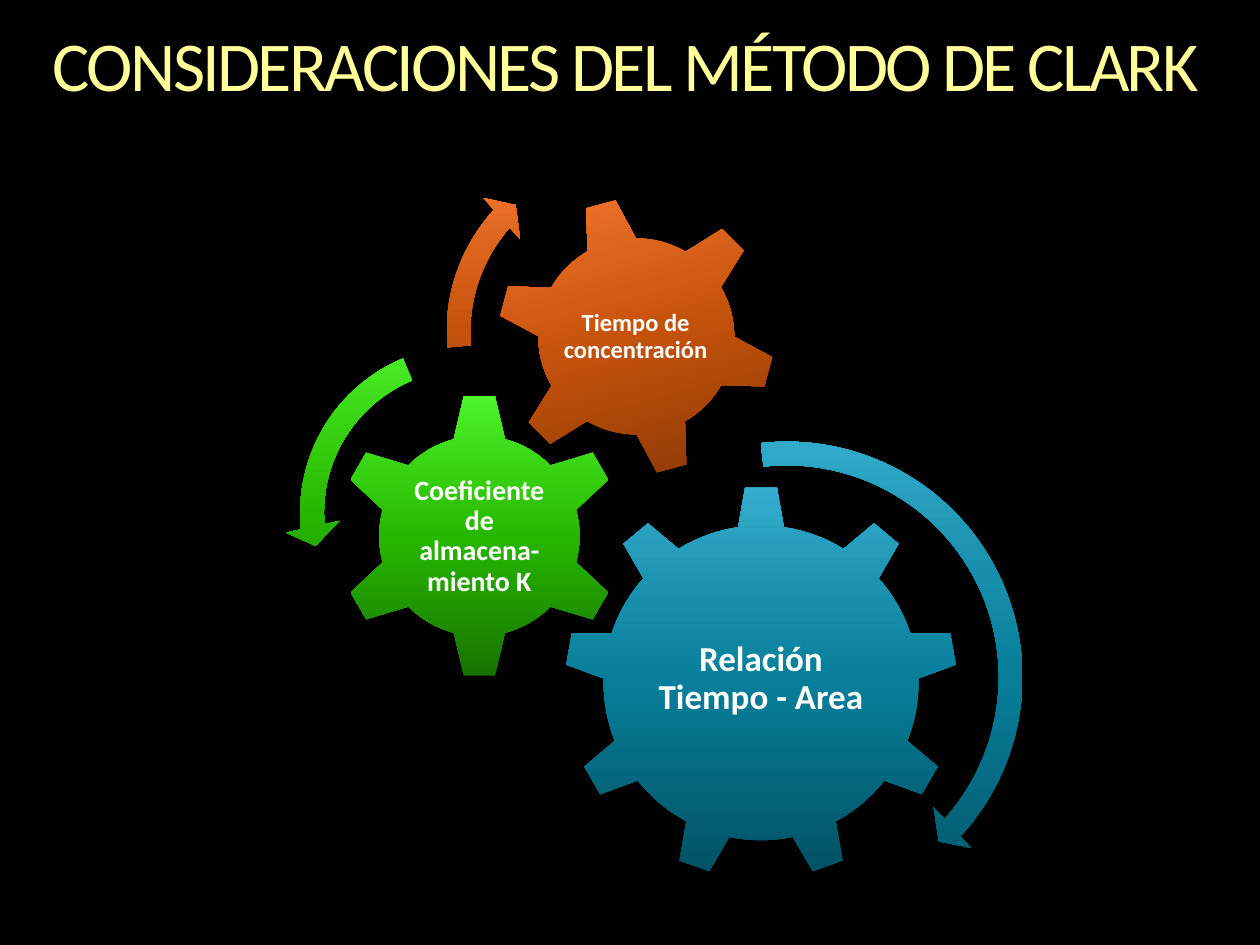
from dataclasses import dataclass

from lxml.etree import SubElement
from pptx import Presentation
from pptx.dml.color import RGBColor
from pptx.enum.shapes import MSO_SHAPE as Shape
from pptx.enum.text import MSO_ANCHOR as Anchor, PP_ALIGN as Align
from pptx.oxml.ns import qn
from pptx.util import Inches, Pt

Box = tuple[float, float, float, float]
Stops = list[tuple[int, str]]

FONT = "Calibri"
BLUE = [(0, "015062"), (50, "077E99"), (70, "178EAB"), (100, "35ADCE")]
GREEN = [(0, "187200"), (50, "27B700"), (70, "35CF0F"), (100, "4EF62C")]
ORANGE = [(0, "7D3203"), (50, "C4520B"), (70, "DB631C"), (100, "FF803C")]
YELLOW = [(0, "FFFFB9"), (36, "FFFF99"), (86, "F6AE1E")]


@dataclass
class Gear:
    kind: Shape
    box: Box
    stops: Stops
    text: str
    text_box: Box
    size: int
    inset: float = 0.02
    rotation: float = 0


@dataclass
class Arrow:
    kind: Shape
    box: Box
    stops: Stops
    adjustments: list[float]


GEARS = [
    Gear(Shape.GEAR_9, (4.48, 3.86, 3.12, 3.12), BLUE,
         "Relación Tiempo - Area", (5.11, 4.59, 1.86, 1.6), 20, inset=0.03),
    Gear(Shape.GEAR_6, (2.67, 3.12, 2.27, 2.27), GREEN,
         "Coeficiente de almacena-miento K", (3.24, 3.7, 1.13, 1.12), 16),
    Gear(Shape.GEAR_6, (3.94, 1.56, 2.22, 2.22), ORANGE,
         "Tiempo de concentración", (4.42, 2.05, 1.25, 1.25), 14, rotation=345),
]
ARROWS = [
    Arrow(Shape.CIRCULAR_ARROW, (4.25, 3.38, 3.99, 3.99), BLUE,
          [0.047, 2.99, 25.356, 158.199, 0.055]),
    Arrow(Shape.LEFT_CIRCULAR_ARROW, (2.26, 2.62, 2.9, 2.9), GREEN,
          [0.065, 4.3, 104.891, 148.378, 0.075]),
    Arrow(Shape.CIRCULAR_ARROW, (3.42, 1.07, 3.13, 3.13), ORANGE,
          [0.06, 3.941, 133.138, 105.082, 0.07]),
]


def color(value: str) -> RGBColor:
    return RGBColor.from_string(value)


def set_gradient(fill, element, stops: Stops, angle: int) -> None:
    fill.gradient()
    fill.gradient_angle = angle
    gs_list = next(element.iter(qn("a:gsLst")))
    for gs in list(gs_list):
        gs_list.remove(gs)
    for position, value in stops:
        gs = SubElement(gs_list, qn("a:gs"), pos=str(position * 1000))
        SubElement(gs, qn("a:srgbClr"), val=value)


def add_text(slide, text: str, box: Box, *, size: int, bold: bool = False,
             align=Align.LEFT, anchor=Anchor.TOP, inset: float = 0,
             fill: str = "FFFFFF"):
    tf = slide.shapes.add_textbox(*map(Inches, box)).text_frame
    tf.word_wrap = True
    tf.vertical_anchor = anchor
    tf.margin_left = tf.margin_right = Inches(inset)
    tf.margin_top = tf.margin_bottom = Inches(inset)
    p = tf.paragraphs[0]
    p.alignment = align
    p.line_spacing = 0.9
    r = p.add_run()
    r.text = text
    r.font.name = FONT
    r.font.size = Pt(size)
    r.font.bold = bold
    r.font.color.rgb = color(fill)
    return r


def add_shape(slide, kind: Shape, box: Box, stops: Stops):
    sp = slide.shapes.add_shape(kind, *map(Inches, box))
    sp.shadow.inherit = False
    sp.line.fill.background()
    set_gradient(sp.fill, sp._element, stops, 90)
    return sp


def add_gear(slide, gear: Gear) -> None:
    sp = add_shape(slide, gear.kind, gear.box, gear.stops)
    sp.rotation = gear.rotation
    add_text(slide, gear.text, gear.text_box, size=gear.size, bold=True,
             align=Align.CENTER, anchor=Anchor.MIDDLE, inset=gear.inset)


def add_arrow(slide, arrow: Arrow) -> None:
    sp = add_shape(slide, arrow.kind, arrow.box, arrow.stops)
    for i, value in enumerate(arrow.adjustments):
        sp.adjustments[i] = value


def main() -> None:
    prs = Presentation()
    prs.slide_width, prs.slide_height = Inches(10), Inches(7.5)
    slide = prs.slides.add_slide(prs.slide_layouts[6])
    slide.background.fill.solid()
    slide.background.fill.fore_color.rgb = color("000000")

    title = add_text(slide, "CONSIDERACIONES DEL MÉTODO DE CLARK",
                     (0.42, 0.25, 9.17, 0.61), size=40)
    title.font._element.set("spc", "-150")
    set_gradient(title.font.fill, title._r, YELLOW, 270)

    for gear in GEARS:
        add_gear(slide, gear)
    for arrow in ARROWS:
        add_arrow(slide, arrow)
    prs.save("out.pptx")


if __name__ == "__main__":
    main()
